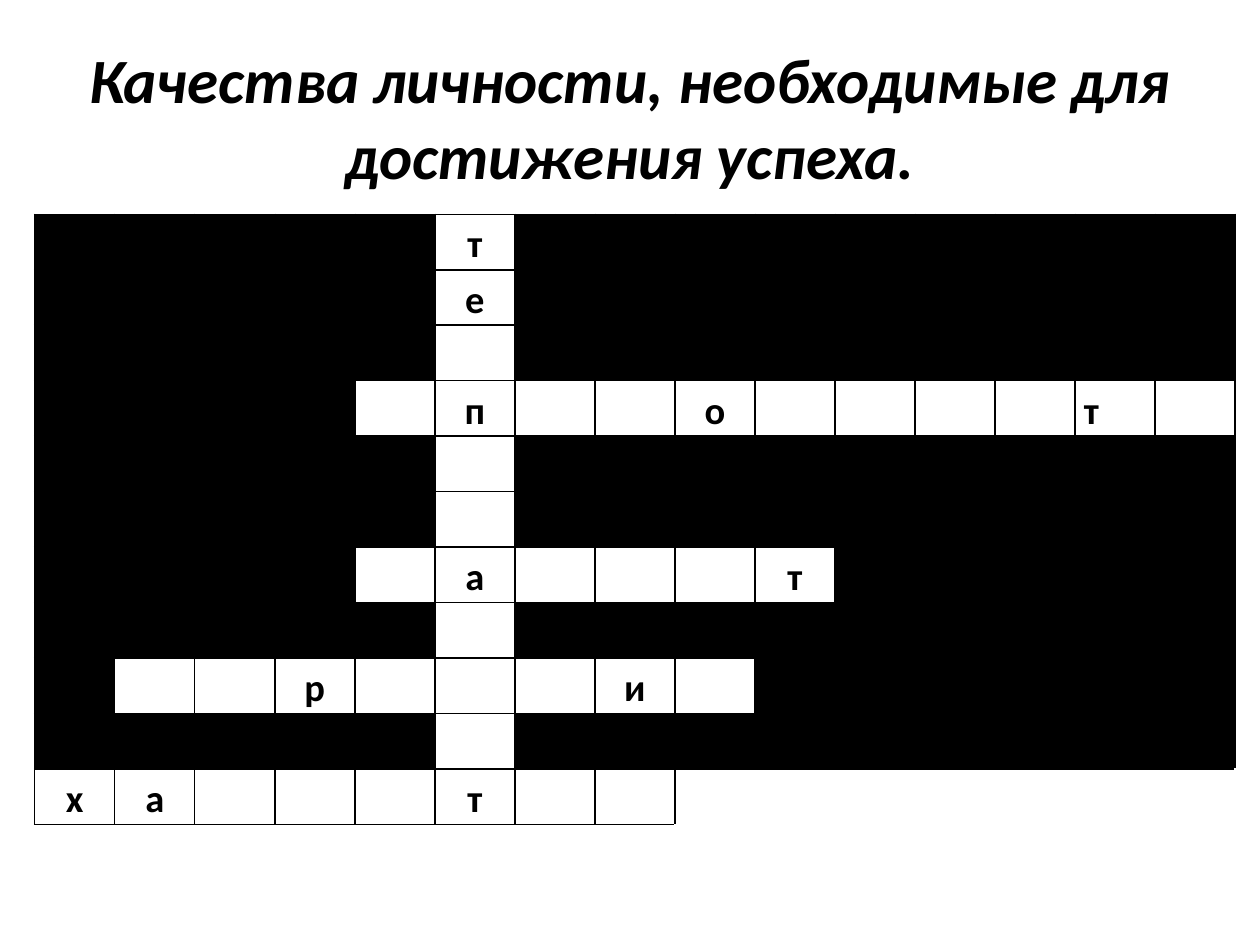
import pptx
import pptx.dml.color
import pptx.enum.text
import pptx.util
from lxml import etree

Cm = pptx.util.Cm
Pt = pptx.util.Pt
ALIGN = pptx.enum.text.PP_ALIGN
ANCHOR = pptx.enum.text.MSO_ANCHOR
NAMESPACE = "http://schemas.openxmlformats.org/drawingml/2006/main"

BLACK = "000000"
WHITE = "FFFFFF"
WALL = "#"
EMPTY = "."
OUTSIDE = "_"
CROSSWORD = [
    "#####т#########",
    "#####е#########",
    "#####.#########",
    "####.п..о....т.",
    "#####.#########",
    "#####.#########",
    "####.а...т#####",
    "#####.#########",
    "#..р...и.######",
    "#####.#########",
    "ха...т.._______",
]
LEFT_ALIGNED = (3, 13)


def color(code):
    return pptx.dml.color.RGBColor.from_string(code)


class CrosswordSlide:
    """Holds the text style and the current page, and draws its elements."""

    def __init__(self, page, font="Calibri", ink=BLACK):
        self.page = page
        self.font = font
        self.ink = ink

    def style(self, para, size, align, italic=False):
        para.alignment = align
        para.font.name = self.font
        para.font.size = Pt(size)
        para.font.bold = True
        para.font.italic = italic
        para.font.color.rgb = color(self.ink)

    def title(self, text, left, top, width, height):
        box = self.page.shapes.add_textbox(Cm(left), Cm(top), Cm(width), Cm(height))
        frame = box.text_frame
        frame.word_wrap = True
        frame.vertical_anchor = ANCHOR.MIDDLE
        frame.text = text
        self.style(frame.paragraphs[0], 36, ALIGN.CENTER, italic=True)

    def borders(self, cell, sides):
        properties = cell._tc.get_or_add_tcPr()
        for side in sides:
            line = etree.SubElement(properties, f"{{{NAMESPACE}}}ln{side}", w=str(Pt(1)))
            fill = etree.SubElement(line, f"{{{NAMESPACE}}}solidFill")
            etree.SubElement(fill, f"{{{NAMESPACE}}}srgbClr", val=self.ink)

    def square(self, cell, mark, align):
        cell.margin_left = cell.margin_right = Cm(0.18)
        cell.margin_top = cell.margin_bottom = 0
        self.borders(cell, "LT" if mark == OUTSIDE else "LRTB")
        if mark == OUTSIDE:
            cell.fill.background()
            return
        cell.fill.solid()
        cell.fill.fore_color.rgb = color(BLACK if mark == WALL else WHITE)
        if mark not in (WALL, EMPTY):
            cell.text = mark
            para = cell.text_frame.paragraphs[0]
            para.line_spacing = 1.15
            self.style(para, 22, align)

    def crossword(self, rows, left, top, width, height):
        row_count, column_count = len(rows), len(rows[0])
        table = self.page.shapes.add_table(
            row_count, column_count, Cm(left), Cm(top), Cm(width), Cm(height)
        ).table
        table.first_row = False
        table.horz_banding = False
        for row, marks in enumerate(rows):
            for column, mark in enumerate(marks):
                align = ALIGN.LEFT if (row, column) == LEFT_ALIGNED else ALIGN.CENTER
                self.square(table.cell(row, column), mark, align)
        last = row_count - 1
        first_outside = rows[last].index(OUTSIDE)
        table.cell(last, first_outside).merge(table.cell(last, column_count - 1))


def main():
    deck = pptx.Presentation()
    deck.slide_width = Cm(25.4)
    deck.slide_height = Cm(19.05)
    slide = CrosswordSlide(deck.slides.add_slide(deck.slide_layouts[6]))
    slide.title("Качества личности, необходимые для достижения успеха.", 1.27, 0.76, 22.86, 3.18)
    slide.crossword(CROSSWORD, 0.7, 4.32, 24.2, 12.3)
    deck.save("out.pptx")


if __name__ == "__main__":
    main()
